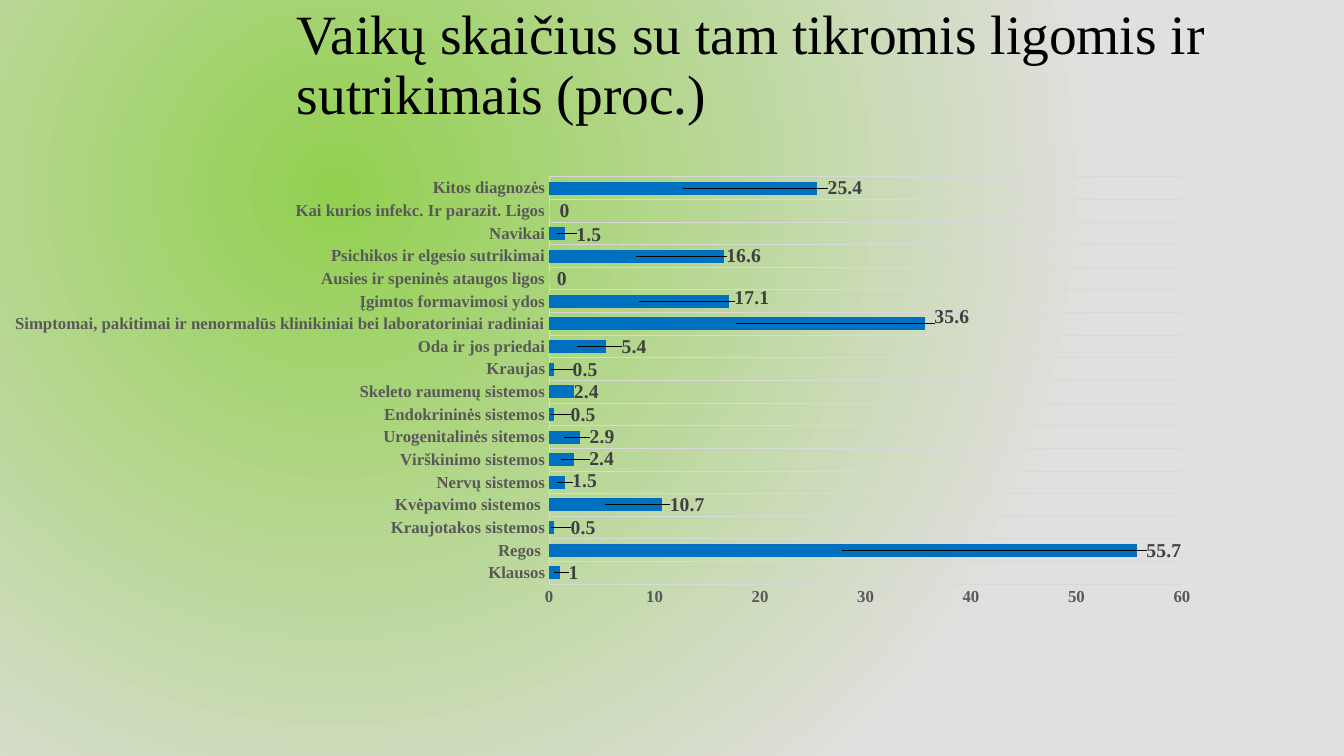
from dataclasses import dataclass

from pptx import Presentation, util as u
from pptx.chart import data as cd
from pptx.dml import color as col
from pptx.enum import chart as ce, text as te
from pptx.oxml import ns, parse_xml


@dataclass(frozen=True)
class Theme:
    font: str = "Times New Roman"
    title: float = 39.6
    label: float = 14
    axis: float = 12
    black: str = "000000"
    bar: str = "0070C0"
    grid: str = "D9D9D9"
    tick: str = "595959"
    value: str = "404040"
    inner: str = "92D050"
    outer: str = "E1DFDF"


T = Theme()
TOP = 60  # end of the value axis
PLOT = dict(x=0.467, y=0.041, w=0.51, h=0.81)  # shares of the chart box

# Name, value, label distance from the bar end and label rise (points)
ROWS = [
    ("Klausos", 1, 10, 0),
    ("Regos ", 55.7, 19.5, 0),
    ("Kraujotakos sistemos", 0.5, 20.5, 0),
    ("Kvėpavimo sistemos ", 10.7, 18, 0),
    ("Nervų sistemos", 1.5, 14, 1),
    ("Virškinimo sistemos", 2.4, 19.5, 1),
    ("Urogenitalinės sitemos", 2.9, 16, 0),
    ("Endokrininės sistemos", 0.5, 20.5, 0),
    ("Skeleto raumenų sistemos", 2.4, 8.5, 0),
    ("Kraujas", 0.5, 22, 0),
    ("Oda ir jos priedai", 5.4, 20, 0),
    ("Simptomai, pakitimai ir nenormalūs klinikiniai bei laboratoriniai radiniai",
     35.6, 19.5, 5),
    ("Įgimtos formavimosi ydos", 17.1, 16, 2.5),
    ("Ausies ir speninės ataugos ligos", 0, 9, 0),
    ("Psichikos ir elgesio sutrikimai", 16.6, 14, 0),
    ("Navikai", 1.5, 17, -1),
    ("Kai kurios infekc. Ir parazit. Ligos", 0, 11, 0),
    ("Kitos diagnozės", 25.4, 20, 0),
]


def rgb(code):
    return col.RGBColor.from_string(code)


def style(font, size, code, bold=False):
    font.name, font.size, font.bold = T.font, u.Pt(size), bold
    font.color.rgb = rgb(code)


def layout(head="", **parts):
    body = "".join(f'<c:{key} val="{val:.4f}"/>' for key, val in parts.items())
    return parse_xml(f'<c:layout {ns.nsdecls("c")}><c:manualLayout>{head}{body}'
                     '</c:manualLayout></c:layout>')


# Round gradient behind the whole slide
def paint(slide):
    stops = "".join(f'<a:gs pos="{pos}"><a:srgbClr val="{code}"/></a:gs>'
                    for pos, code in ((0, T.inner), (100000, T.outer)))
    slide.element.cSld.insert(0, parse_xml(
        f'<p:bg {ns.nsdecls("p", "a")}><p:bgPr><a:gradFill rotWithShape="1">'
        f'<a:gsLst>{stops}</a:gsLst><a:path path="circle">'
        '<a:fillToRect l="50000" t="50000" r="100000" b="100000"/></a:path>'
        '</a:gradFill><a:effectLst/></p:bgPr></p:bg>'))


# Title
def head(slide, box, words):
    frame = slide.shapes.add_textbox(*map(u.Pt, box)).text_frame
    frame.word_wrap = True
    frame.vertical_anchor = te.MSO_ANCHOR.MIDDLE
    para = frame.paragraphs[0]
    para.line_spacing = 0.9
    run = para.add_run()
    run.text = words
    style(run.font, T.title, T.black)


# Both axes of the chart
def axes(chart):
    cat, val = chart.category_axis, chart.value_axis
    for axis in (cat, val):
        axis.major_tick_mark = axis.minor_tick_mark = ce.XL_TICK_MARK.NONE
        style(axis.tick_labels.font, T.axis, T.tick, True)
    cat.has_major_gridlines = True
    for line in (cat.format.line, cat.major_gridlines.format.line):
        line.color.rgb = rgb(T.grid)
        line.width = u.Pt(0.75)
    val.has_major_gridlines = False
    val.format.line.fill.background()
    val.minimum_scale, val.maximum_scale, val.major_unit = 0, TOP, 10


# Value labels, moved from the bar centre to just past its end
def tags(bars, wide, high):
    labels = bars.data_labels
    labels.show_value = True
    style(labels.font, T.label, T.value, True)
    for num, (_, val, gap, rise) in enumerate(ROWS):
        style(bars.points[num].data_label.font, T.label, T.value, True)
        half = val / TOP * PLOT["w"] / 2
        mark = bars.data_labels._element.findall(ns.qn("c:dLbl"))[num]
        mark.insert(1, layout(x=half + gap / wide, y=-rise / high))


# Bar chart
def graph(slide, box):
    data = cd.CategoryChartData()
    data.categories = [row[0] for row in ROWS]
    data.add_series("Series 1", [row[1] for row in ROWS])
    chart = slide.shapes.add_chart(
        ce.XL_CHART_TYPE.BAR_STACKED, *map(u.Pt, box), data).chart
    chart.has_legend = chart.has_title = False
    style(chart.font, T.axis, T.black)
    axes(chart)
    plot = chart.plots[0]
    plot.gap_width, plot.overlap = 75, 100
    plot.vary_by_categories = False
    bars = plot.series[0]
    bars.format.fill.solid()
    bars.format.fill.fore_color.rgb = rgb(T.bar)
    tags(bars, *box[2:])
    area = chart._chartSpace.chart.plotArea
    for old in area.findall(ns.qn("c:layout")):
        area.remove(old)
    area.insert(0, layout('<c:layoutTarget val="inner"/><c:xMode val="edge"/>'
                          '<c:yMode val="edge"/>', **PLOT))


def main():
    deck = Presentation()
    deck.slide_width, deck.slide_height = u.Pt(960), u.Pt(540)
    slide = deck.slides.add_slide(deck.slide_layouts[6])
    paint(slide)
    head(slide, (205, 9.4, 682.5, 75.6),
         "Vaikų skaičius su tam tikromis ligomis ir sutrikimais (proc.)")
    graph(slide, (-21.6, 111.6, 886.3, 359.3))
    deck.save("out.pptx")


if __name__ == "__main__":
    main()
